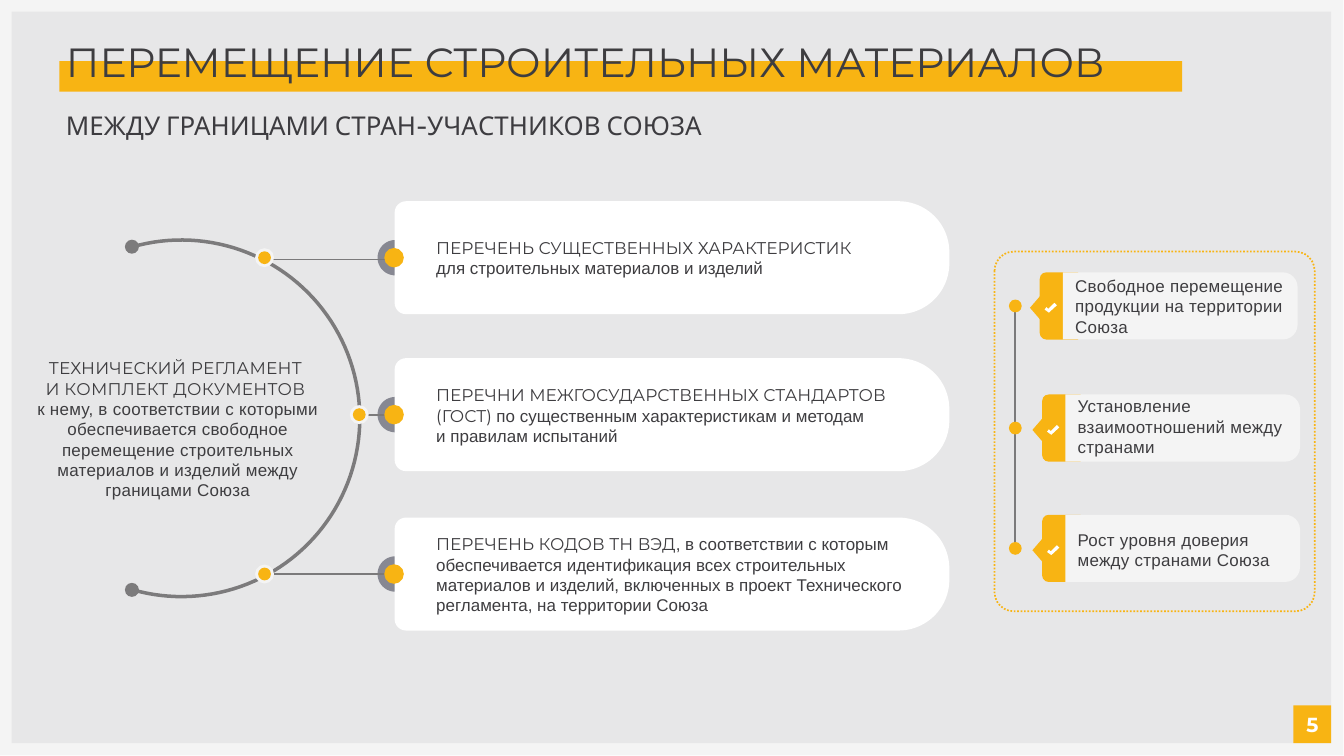
"""Build the slide about moving construction materials between union countries."""
from math import cos, radians, sin

from lxml.etree import SubElement
from pptx import Presentation
from pptx.dml.color import RGBColor
from pptx.enum.dml import MSO_LINE
from pptx.enum.shapes import MSO_CONNECTOR, MSO_SHAPE
from pptx.enum.text import MSO_AUTO_SIZE, PP_ALIGN
from pptx.oxml.ns import qn
from pptx.util import Pt

SCALE = 9144
COLORS = {"frame": "F4F4F4", "panel": "E7E7E8", "accent": "F8B413", "white": "FFFFFF",
          "text": "3E3D40", "subtitle": "3D3C40", "arc": "7C7B7C", "line": "7B7A7B",
          "half": "878892"}
STYLES = {
    "title": {"name": "Montserrat", "size": Pt(48)},
    "subtitle": {"name": "Cabin", "size": Pt(30.5)},
    "number": {"name": "Montserrat", "size": Pt(24), "bold": True},
    "caps": {"name": "Montserrat", "size": Pt(20)},
    "body": {"name": "Arial", "size": Pt(20)},
}
BACKGROUND = [((0, 0, 2199, 1237), "frame"), ((19, 19, 2160, 1198), "panel"),
              ((2117, 1155, 62, 62), "accent"), ((97, 100, 1838, 50), "accent")]
TITLE = [[("ПЕРЕМЕЩЕНИЕ СТРОИТЕЛЬНЫХ МАТЕРИАЛОВ", "title")]]
SUBTITLE = [[("МЕЖДУ ГРАНИЦАМИ СТРАН-УЧАСТНИКОВ СОЮЗА", "subtitle")]]
NUMBER = [[("5", "number")]]
REGULATION = [
    [("ТЕХНИЧЕСКИЙ РЕГЛАМЕНТ ", "caps")],
    [("И КОМПЛЕКТ ДОКУМЕНТОВ ", "caps")],
    [("к нему, в соответствии с которыми обеспечивается свободное перемещение "
      "строительных материалов и изделий между границами Союза", "body")],
]
CARDS = [
    {"center": 422, "ring": 433, "line": (443, 425), "text": (388, 69), "paragraphs": [
        [("ПЕРЕЧЕНЬ СУЩЕСТВЕННЫХ ХАРАКТЕРИСТИК", "caps")],
        [("для строительных материалов и изделий", "body")]]},
    {"center": 679, "ring": 588, "line": (587, 680), "text": (629, 102), "paragraphs": [
        [("ПЕРЕЧНИ МЕЖГОСУДАРСТВЕННЫХ СТАНДАРТОВ (ГОСТ) ", "caps"),
         ("по существенным характеристикам и методам", "body")],
        [("и правилам испытаний", "body")]]},
    {"center": 940, "ring": 433, "line": (443, 940), "text": (873, 136), "paragraphs": [
        [("ПЕРЕЧЕНЬ КОДОВ ТН ВЭД", "caps"),
         (", в соответствии с которым обеспечивается идентификация всех строительных "
          "материалов и изделий, включенных в проект Технического регламента, "
          "на территории Союза", "body")]]},
]
BENEFITS = [
    {"center": 501, "shift": 0, "text": (450, 102),
     "words": "Свободное перемещение продукции на территории Союза"},
    {"center": 701, "shift": 4, "text": (647, 102),
     "words": "Установление взаимоотношений между странами"},
    {"center": 898, "shift": 4, "text": (866, 69),
     "words": "Рост уровня доверия между странами Союза"},
]
CHECK = [(7, 16), (0, 11), (3, 7), (6, 10), (16, 0), (20, 4)]


def emu(*values):
    return [round(value * SCALE) for value in values]


def color(name):
    return RGBColor.from_string(COLORS[name])


def paint(shape, fill=None, line=None, width=0):
    shape.shadow.inherit = False
    if fill:
        shape.fill.solid()
        shape.fill.fore_color.rgb = color(fill)
    else:
        shape.fill.background()
    if line:
        shape.line.color.rgb = color(line)
        shape.line.width = Pt(width)
    else:
        shape.line.fill.background()
    return shape


def add_shape(slide, kind, box, fill=None, rotation=0, adjustments=(), **outline):
    left, top, width, height = box
    if rotation:
        left, top = left + (width - height) / 2, top + (height - width) / 2
        width, height = height, width
    shape = slide.shapes.add_shape(kind, *emu(left, top, width, height))
    shape.rotation = rotation
    for index, value in enumerate(adjustments):
        shape.adjustments[index] = value
    return paint(shape, fill, **outline)


def add_dot(slide, center_x, center_y, diameter, fill):
    box = (center_x - diameter / 2, center_y - diameter / 2, diameter, diameter)
    add_shape(slide, MSO_SHAPE.OVAL, box, fill)


def add_outline(slide, points, close=True, **style):
    points = [emu(*point) for point in points]
    builder = slide.shapes.build_freeform(*points[0])
    builder.add_line_segments(points[1:], close=close)
    paint(builder.convert_to_shape(), **style)


def arc_points(center_x, center_y, radius, start, end, steps):
    angles = [radians(start + (end - start) * step / steps) for step in range(steps + 1)]
    return [(center_x + radius * cos(angle), center_y + radius * sin(angle))
            for angle in angles]


def add_line(slide, *ends):
    connector = slide.shapes.add_connector(MSO_CONNECTOR.STRAIGHT, *emu(*ends))
    connector.line.color.rgb = color("line")
    connector.line.width = Pt(2.25)
    SubElement(connector._element.spPr, qn("a:effectLst"))


def add_text(slide, box, paragraphs, fill="text", align=PP_ALIGN.LEFT, spacing=0, before=0,
             inset=True):
    frame = slide.shapes.add_textbox(*emu(*box)).text_frame
    layout = {"word_wrap": True, "auto_size": MSO_AUTO_SIZE.SHAPE_TO_FIT_TEXT}
    if inset:
        layout.update(margin_left=0, margin_right=0, margin_top=SCALE, margin_bottom=0)
    for name, value in layout.items():
        setattr(frame, name, value)
    for index, runs in enumerate(paragraphs):
        paragraph = frame.add_paragraph() if index else frame.paragraphs[0]
        paragraph.alignment = align
        paragraph.space_before = Pt(before)
        for words, style in runs:
            run = paragraph.add_run()
            run.text = words
            run.font.color.rgb = color(fill)
            for name, value in STYLES[style].items():
                setattr(run.font, name, value)
            if spacing:
                run._r.get_or_add_rPr().set("spc", str(spacing))


def add_card(slide, card):
    center, ring = card["center"], card["ring"]
    line_left, line_top = card["line"]
    text_top, text_height = card["text"]
    add_outline(slide, arc_points(647, center, 29, 90, 270, 24), fill="half")
    add_shape(slide, MSO_SHAPE.ROUND_2_SAME_RECTANGLE, (646, center - 92.5, 908, 185),
              "white", 270, (0.1, 0.45))
    add_line(slide, line_left, line_top, 647, line_top)
    add_dot(slide, ring, center, 31, "frame")
    add_dot(slide, ring, center, 21, "accent")
    add_dot(slide, 645, center, 32, "accent")
    add_text(slide, (714, text_top, 798, text_height), card["paragraphs"])


def add_benefit(slide, benefit):
    center, shift = benefit["center"], benefit["shift"]
    text_top, text_height = benefit["text"]
    add_dot(slide, 1662, center, 21, "accent")
    add_shape(slide, MSO_SHAPE.ROUND_2_SAME_RECTANGLE,
              (1702 + shift, center - 55, 63, 110), "accent", 270)
    add_shape(slide, MSO_SHAPE.ROUND_2_SAME_RECTANGLE,
              (1740 + shift, center - 55, 384, 110), "frame", 90, (0.22, 0))
    add_shape(slide, MSO_SHAPE.ISOSCELES_TRIANGLE,
              (1686 + shift, center - 26, 25, 58), "accent", 270)
    add_text(slide, (1760 + shift, text_top, 364, text_height),
             [[(benefit["words"], "body")]], spacing=30)
    add_outline(slide, [(1710 + shift + x, center - 5 + y) for x, y in CHECK], fill="white")


def main():
    presentation = Presentation()
    presentation.slide_width, presentation.slide_height = emu(2200, 1238)
    slide = presentation.slides.add_slide(presentation.slide_layouts[6])
    for box, fill in BACKGROUND:
        add_shape(slide, MSO_SHAPE.RECTANGLE, box, fill)
    add_text(slide, (2115, 1161, 67, 50), NUMBER, "white", PP_ALIGN.CENTER, inset=False)
    add_text(slide, (108, 60, 1977, 82), TITLE, before=1)
    add_text(slide, (108, 178, 1929, 53), SUBTITLE, "subtitle", spacing=10, before=1)
    add_outline(slide, arc_points(297, 685, 292, -106, 106, 90), close=False,
                line="arc", width=4.13)
    for center in (404, 966):
        add_dot(slide, 216, center, 23, "arc")
    add_text(slide, (49, 585, 484, 237), REGULATION, align=PP_ALIGN.CENTER, spacing=30)
    for card in CARDS:
        add_card(slide, card)
    add_line(slide, 1662, 495, 1662, 902)
    for benefit in BENEFITS:
        add_benefit(slide, benefit)
    border = add_shape(slide, MSO_SHAPE.ROUNDED_RECTANGLE, (1628, 412, 524, 589),
                       adjustments=(0.06,), line="accent", width=2)
    border.line.dash_style = MSO_LINE.ROUND_DOT
    presentation.save("out.pptx")


if __name__ == "__main__":
    main()
